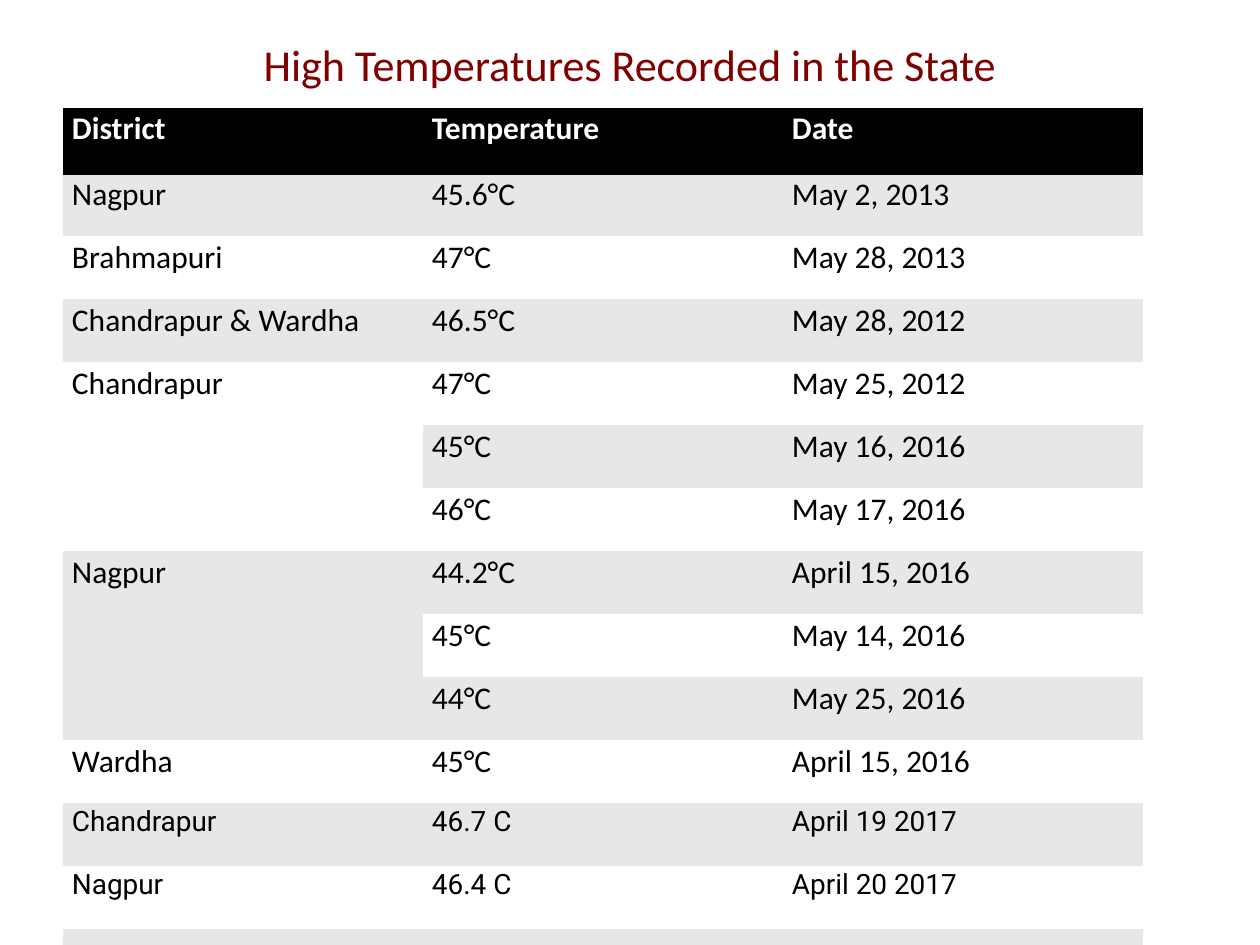
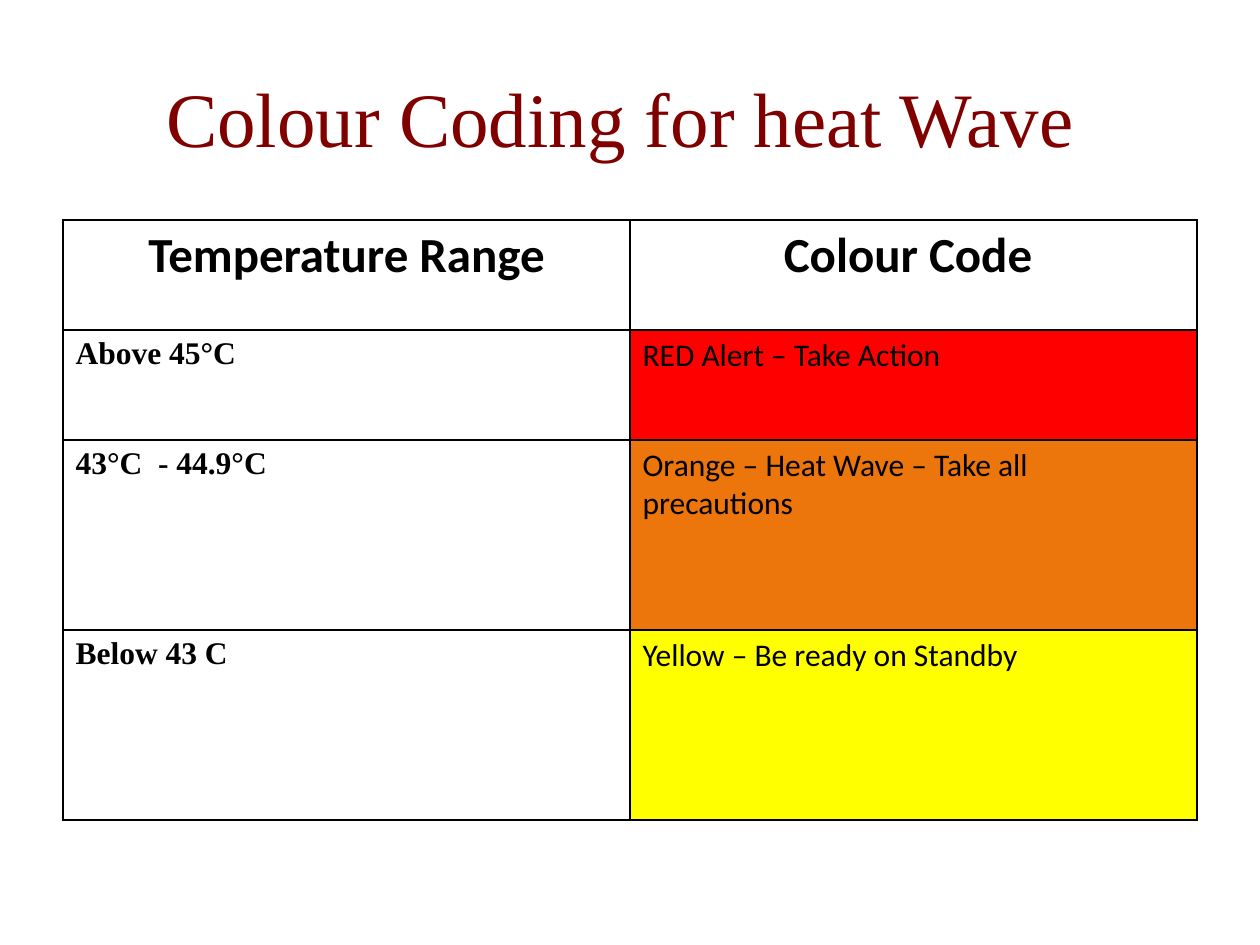
from dataclasses import dataclass

from lxml import etree
from pptx import Presentation
from pptx.dml.color import RGBColor
from pptx.enum.text import MSO_ANCHOR, PP_ALIGN
from pptx.oxml.ns import qn
from pptx.util import Emu, Pt

CENTER, LEFT, JUSTIFY = PP_ALIGN.CENTER, PP_ALIGN.LEFT, PP_ALIGN.JUSTIFY
MIDDLE = MSO_ANCHOR.MIDDLE
PX_PER_INCH = 126
NO_TABLE_STYLE = "{2D5ABB26-0587-4C30-8999-92F81FD0307C}"


@dataclass(frozen=True)
class Theme:
    title: str = "800000"
    ink: str = "000000"
    paper: str = "FFFFFF"
    band: str = "E7E7E7"
    red: str = "FF0000"
    orange: str = "EC750C"
    yellow: str = "FFFF00"
    sans: str = "Calibri"
    serif: str = "Times New Roman"
    alternate: str = "Roboto"
    small_title_size: float = 25.2
    title_size: float = 44
    heading_size: float = 28
    body_size: float = 18
    alternate_size: float = 16


def px(length):
    return Emu(round(length * 914400 / PX_PER_INCH))


def write(frame, text, *, size, font, color, bold=False, align=LEFT, spacing=None):
    paragraph = frame.paragraphs[0]
    paragraph.alignment = align
    if spacing:
        paragraph.line_spacing = spacing
    run = paragraph.add_run()
    run.text = text
    run.font.size = Pt(size)
    run.font.name = font
    run.font.bold = bold
    run.font.color.rgb = RGBColor.from_string(color)


class Deck:
    def __init__(self, theme):
        self.theme = theme
        self.presentation = Presentation()
        self.presentation.slide_width = px(1260)
        self.presentation.slide_height = px(945)
        self.slide = None

    def new_slide(self):
        self.slide = self.presentation.slides.add_slide(self.presentation.slide_layouts[6])

    def title(self, text, height, size, font):
        frame = self.slide.shapes.add_textbox(px(63), px(38), px(1134), px(height)).text_frame
        frame.word_wrap = True
        frame.vertical_anchor = MIDDLE
        write(frame, text, size=size, font=font, color=self.theme.title, align=CENTER)

    def table(self, top, column_widths, row_heights):
        table = self.slide.shapes.add_table(
            len(row_heights), len(column_widths), px(63), px(top),
            px(sum(column_widths)), px(sum(row_heights))).table
        table.first_row = table.horz_banding = False
        table._tbl.tblPr.find(qn("a:tableStyleId")).text = NO_TABLE_STYLE
        for column, width in zip(table.columns, column_widths):
            column.width = px(width)
        for row, height in zip(table.rows, row_heights):
            row.height = px(height)
        return table

    def cell(self, cell, text="", *, fill=None, edges="", edge_width=1, margins=None, **text_format):
        if margins:
            side, end = margins
            cell.margin_left = cell.margin_right = px(side)
            cell.margin_top = cell.margin_bottom = px(end)
        if fill:
            cell.fill.solid()
            cell.fill.fore_color.rgb = RGBColor.from_string(fill)
        else:
            cell.fill.background()
        if text:
            write(cell.text_frame, text, **text_format)
        # Borders come before the fill, in the order given by edges
        properties = cell._tc.get_or_add_tcPr()
        for position, edge in enumerate(edges):
            line = etree.Element(qn(f"a:ln{edge}"), w=str(Pt(edge_width)))
            solid = etree.SubElement(line, qn("a:solidFill"))
            etree.SubElement(solid, qn("a:srgbClr"), val=self.theme.ink)
            properties.insert(position, line)


HEADINGS = ("District", "Temperature", "Date")
READINGS = (
    ("Nagpur", "45.6°C", "May 2, 2013"),
    ("Brahmapuri", "47°C", "May 28, 2013"),
    ("Chandrapur & Wardha", "46.5°C", "May 28, 2012"),
    ("Chandrapur", "47°C", "May 25, 2012"),
    ("", "45°C", "May 16, 2016"),
    ("", "46°C", "May 17, 2016"),
    ("Nagpur", "44.2°C", "April 15, 2016"),
    ("", "45°C", "May 14, 2016"),
    ("", "44°C", "May 25, 2016"),
    ("Wardha", "45°C", "April 15, 2016"),
    ("Chandrapur", "46.7 C", "April 19 2017"),
    ("Nagpur", "46.4 C", "April 20 2017"),
    ("", "", ""),
)
FIRST_ALTERNATE_ROW = 11
DISTRICT_SPANS = ((4, 6), (7, 9))


def high_temperatures(deck):
    theme = deck.theme
    deck.new_slide()
    deck.title("High Temperatures Recorded in the State", 52, theme.small_title_size, theme.sans)
    records = deck.table(110, [360] * 3, [63] * (len(READINGS) + 1))
    margins = (9, 0)

    # Heading row
    for column, heading in enumerate(HEADINGS):
        deck.cell(records.cell(0, column), heading, fill=theme.ink, edges="TB", edge_width=2,
                  margins=margins, size=theme.body_size, font=theme.sans,
                  color=theme.paper, bold=True)

    # Banded readings
    for row, reading in enumerate(READINGS, start=1):
        if row < FIRST_ALTERNATE_ROW:
            size, font = theme.body_size, theme.sans
        else:
            size, font = theme.alternate_size, theme.alternate
        for column, value in enumerate(reading):
            deck.cell(records.cell(row, column), value,
                      fill=theme.band if row % 2 else theme.paper, margins=margins,
                      size=size, font=font, color=theme.ink, align=JUSTIFY, spacing=1.07)

    # Districts with several readings
    for first, last in DISTRICT_SPANS:
        records.cell(first, 0).merge(records.cell(last, 0))


def colour_coding(deck):
    theme = deck.theme
    deck.new_slide()
    deck.title("Colour Coding for heat Wave ", 158, theme.title_size, theme.serif)
    codes = deck.table(220, [567] * 2, [110, 110, 190, 190])
    alerts = (
        ("Above 45°C", "RED Alert – Take Action", theme.red),
        ("43°C  - 44.9°C", "Orange – Heat Wave – Take all precautions", theme.orange),
        ("Below 43 C", "Yellow – Be ready on Standby", theme.yellow),
    )

    # Heading row
    for column, heading in enumerate(("Temperature Range", "Colour Code ")):
        deck.cell(codes.cell(0, column), heading, edges="LRTB", size=theme.heading_size,
                  font=theme.sans, color=theme.ink, bold=True, align=CENTER)

    # Temperature ranges and their alerts
    body = dict(edges="LRTB", size=theme.body_size, color=theme.ink)
    for row, (temperature, alert, fill) in enumerate(alerts, start=1):
        deck.cell(codes.cell(row, 0), temperature, font=theme.serif, bold=True, **body)
        deck.cell(codes.cell(row, 1), alert, fill=fill, font=theme.sans, **body)


def main():
    deck = Deck(Theme())
    high_temperatures(deck)
    colour_coding(deck)
    deck.presentation.save("out.pptx")


if __name__ == "__main__":
    main()
